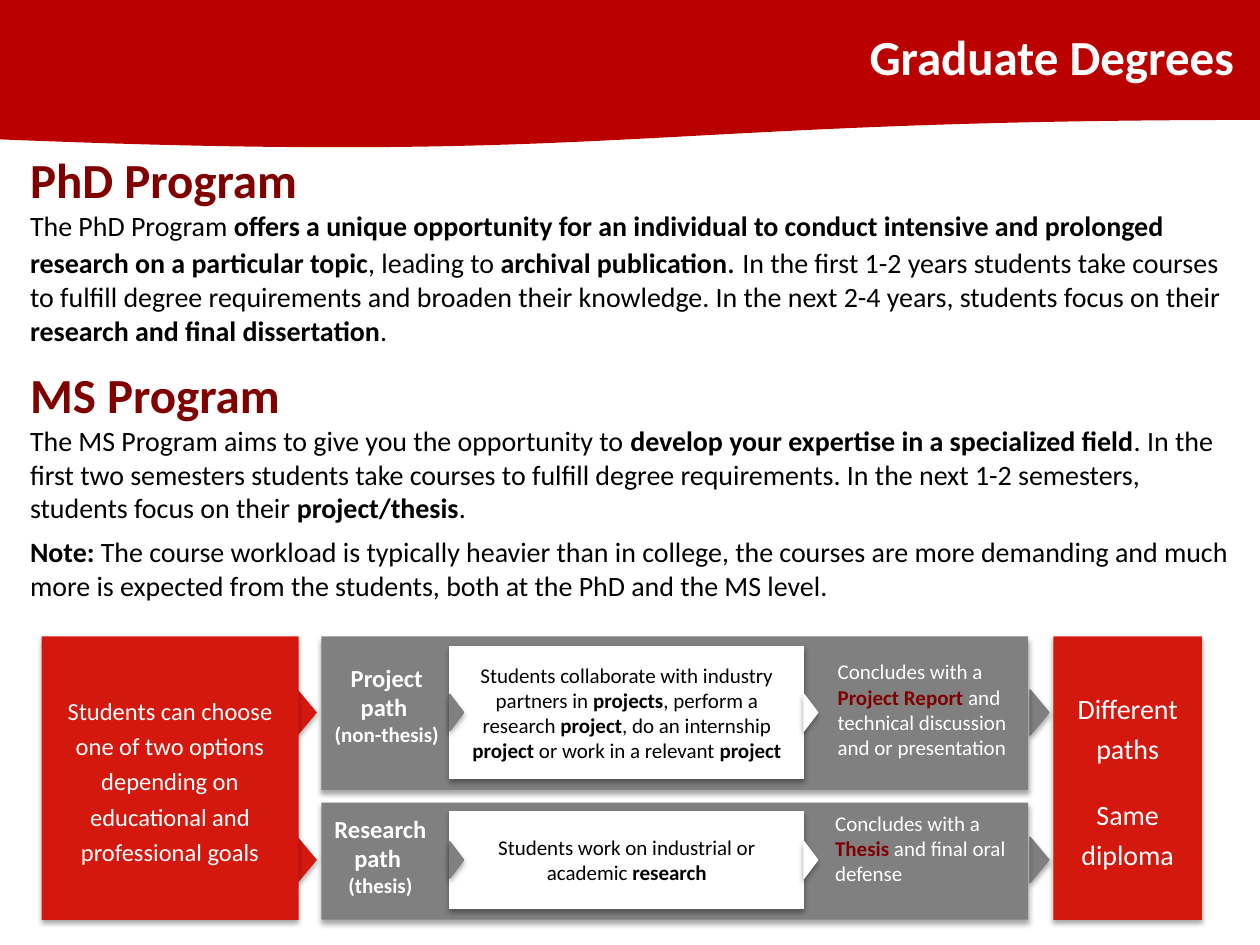
"""Build the Graduate Degrees slide on a grid of 100 columns by 75 rows."""
from dataclasses import dataclass, replace

from lxml import etree
from pptx import Presentation
from pptx.dml.color import RGBColor
from pptx.enum.shapes import MSO_SHAPE
from pptx.enum.text import MSO_ANCHOR, MSO_AUTO_SIZE, PP_ALIGN
from pptx.oxml.ns import qn
from pptx.util import Inches, Pt

RECT, TRIANGLE = MSO_SHAPE.RECTANGLE, MSO_SHAPE.ISOSCELES_TRIANGLE
BANNER = MSO_SHAPE.FLOWCHART_DOCUMENT
LEFT, CENTER, RIGHT = PP_ALIGN.LEFT, PP_ALIGN.CENTER, PP_ALIGN.RIGHT
MIDDLE, FIT = MSO_ANCHOR.MIDDLE, MSO_AUTO_SIZE.SHAPE_TO_FIT_TEXT
FONT = "Calibri"
COLORS = {"banner": "BB0000", "red": "D4180E", "maroon": "800000", "gray": "808080",
          "edge": "7F7F7F", "white": "FFFFFF", "black": "000000"}
COLS, ROWS = 100, 75
PANEL_LEFT, PANEL_WIDTH = 25.5, 56.1
BOX_LEFT, BOX_WIDTH = 35.7, 28.1
BLOCK_TOP, BLOCK_HEIGHT = 50.5, 22.5

prs = Presentation()
prs.slide_width, prs.slide_height = Inches(10), Inches(7.5)
CELL = prs.slide_width / COLS


@dataclass(frozen=True)
class Box:
    x: float
    y: float
    w: float
    h: float

    def emu(self) -> list[int]:
        return [round(v * CELL) for v in (self.x, self.y, self.w, self.h)]


@dataclass(frozen=True)
class Run:
    text: str
    size: float
    color: str
    bold: bool = False


@dataclass(frozen=True)
class Para:
    runs: list[Run]
    align: PP_ALIGN = LEFT
    spacing: float = 1.0
    before: float = 0
    after: float = 0


@dataclass(frozen=True)
class Path:
    panel: Box
    box: Box
    arrow_y: float
    label: Box
    names: tuple[str, str, str]
    work: str
    result: Box
    conclusion: str


def marked(text: str, size: float, color: str, strong: str = "") -> list[Run]:
    """Split text at asterisks; every second part is bold."""
    return [Run(part, size, strong if strong and i % 2 else color, i % 2 == 1)
            for i, part in enumerate(text.split("*")) if part]


def rgb(name: str) -> RGBColor:
    return RGBColor.from_string(COLORS[name])


def write(sp, paras: list[Para]) -> None:
    tf = sp.text_frame
    for i, para in enumerate(paras):
        p = tf.add_paragraph() if i else tf.paragraphs[0]
        p.alignment, p.line_spacing = para.align, para.spacing
        p.space_after = Pt(para.after)
        if i:
            p.space_before = Pt(para.before)
        for run in para.runs:
            r = p.add_run()
            r.text = run.text
            r.font.name, r.font.size, r.font.bold = FONT, Pt(run.size), run.bold
            r.font.color.rgb = rgb(run.color)


def text(s, box: Box, paras: list[Para], wrap: bool = True) -> None:
    sp = s.shapes.add_textbox(*box.emu())
    sp.text_frame.word_wrap = wrap
    sp.text_frame.auto_size = FIT
    write(sp, paras)


def shade(sp) -> None:
    effects = sp._element.spPr.find(qn("a:effectLst"))
    shadow = etree.SubElement(effects, qn("a:outerShdw"), blurRad=str(Pt(3.1)),
                              dist=str(Pt(1.8)), dir="5400000", rotWithShape="0")
    color = etree.SubElement(shadow, qn("a:srgbClr"), val=COLORS["black"])
    etree.SubElement(color, qn("a:alpha"), val="35000")


def shape(s, kind: MSO_SHAPE, box: Box, fill: str, line: float = 0,
          paras: list[Para] | None = None, shadow: bool = True):
    sp = s.shapes.add_shape(kind, *box.emu())
    sp.shadow.inherit = False
    sp.fill.solid()
    sp.fill.fore_color.rgb = rgb(fill)
    if line:
        sp.line.color.rgb, sp.line.width = rgb(fill), Pt(line)
    else:
        sp.line.fill.background()
    if shadow:
        shade(sp)
    if paras:
        sp.text_frame.word_wrap = True
        sp.text_frame.vertical_anchor = MIDDLE
        write(sp, paras)
    return sp


def arrow(s, x: float, y: float, length: float, span: float, fill: str, line: float) -> None:
    """Draw a right-pointing triangle with its base at x, centred on y."""
    box = Box(x + (length - span) / 2, y - length / 2, span, length)
    shape(s, TRIANGLE, box, fill, line).rotation = 90


def draw_path(s, path: Path) -> None:
    arrow(s, 81.75, path.arrow_y, 1.5, 3.6, "edge", 0.75)
    shape(s, RECT, path.panel, "gray")
    shape(s, RECT, path.box, "white", 0.75, [Para(marked(path.work, 12, "black"), CENTER)])
    text(s, path.label, [Para([Run(name, size, "white", True)], CENTER)
                         for name, size in zip(path.names, (14, 14, 12))], wrap=False)
    text(s, path.result, [Para(marked(path.conclusion, 12, "white", "maroon"))])
    for x, fill in ((BOX_LEFT, "gray"), (BOX_LEFT + BOX_WIDTH, "white")):
        arrow(s, x, path.arrow_y, 1.1, 2.9, fill, 0.75)


def heading(title: str) -> Para:
    return Para([Run(title, 28, "maroon", True)], spacing=1.3)


def body(copy: str) -> list[Run]:
    return marked(copy, 16, "black")


PHD = (body("The PhD Program *offers a unique opportunity for an individual to conduct "
            "intensive and prolonged research on a particular topic*, leading to "
            "*archival publication*")
       + [Run(". ", 18, "black")]
       + body("In the first 1-2 years students take courses to fulfill degree requirements "
              "and broaden their knowledge. In the next 2-4 years, students focus on their "
              "*research and final dissertation*."))
MS = body("The MS Program aims to give you the opportunity to *develop your expertise in a "
          "specialized field*. In the first two semesters students take courses to fulfill "
          "degree requirements. In the next 1-2 semesters, students focus on their "
          "*project/thesis*.")
NOTE = body("*Note:* The course workload is typically heavier than in college, the courses are "
            "more demanding and much more is expected from the students, both at the PhD and "
            "the MS level.")
CHOICE = Para([Run("Students can choose one of two options depending on educational and "
                   "professional goals", 14, "white")], CENTER, 1.2)
OUTCOME = [Para([Run(line, 16, "white")], CENTER, 1.2)
           for line in ("Different", "paths", "Same diploma")]
OUTCOME[-1] = replace(OUTCOME[-1], before=14.6)

PATHS = [
    Path(Box(PANEL_LEFT, 50.5, PANEL_WIDTH, 12.2), Box(BOX_LEFT, 51.3, BOX_WIDTH, 10.5), 56.55,
         Box(PANEL_LEFT, 52.1, 10.4, 7.7), ("Project", "path ", "(non-thesis)"),
         "Students collaborate with industry partners in *projects*, perform a research "
         "*project*, do an internship *project *or work in a relevant *project*",
         Box(65.5, 51.8, 16.6, 9.1),
         "Concludes with a *Project Report *and technical discussion and or presentation"),
    Path(Box(PANEL_LEFT, 63.7, PANEL_WIDTH, 9.3), Box(BOX_LEFT, 64.4, BOX_WIDTH, 7.7), 68.25,
         Box(PANEL_LEFT, 64.1, 9.4, 7.7), ("Research", "path ", "(thesis)"),
         "Students work on industrial or academic *research*",
         Box(65.3, 63.8, 15.6, 7.1),
         "Concludes with a *Thesis* and final oral defense"),
]


def main() -> None:
    s = prs.slides.add_slide(prs.slide_layouts[6])
    shape(s, BANNER, Box(0, 0, COLS, 11.7), "banner", 2, shadow=False)
    text(s, Box(38.9, 0.7, 60, 6.5),
         [Para([Run("Graduate Degrees", 28, "white", True)], RIGHT, 1.2)])
    text(s, Box(1.4, 10, 97.5, 39),
         [heading("PhD Program"), Para(PHD), heading("MS Program"), Para(MS, after=6), Para(NOTE)])
    for path in PATHS:
        arrow(s, 23.65, path.arrow_y, 1.5, 3.6, "red", 0)
    shape(s, RECT, Box(3.3, BLOCK_TOP, 20.4, BLOCK_HEIGHT), "red", paras=[CHOICE])
    shape(s, RECT, Box(83.6, BLOCK_TOP, 11.8, BLOCK_HEIGHT), "red", paras=OUTCOME)
    for path in PATHS:
        draw_path(s, path)
    prs.save("out.pptx")


if __name__ == "__main__":
    main()
